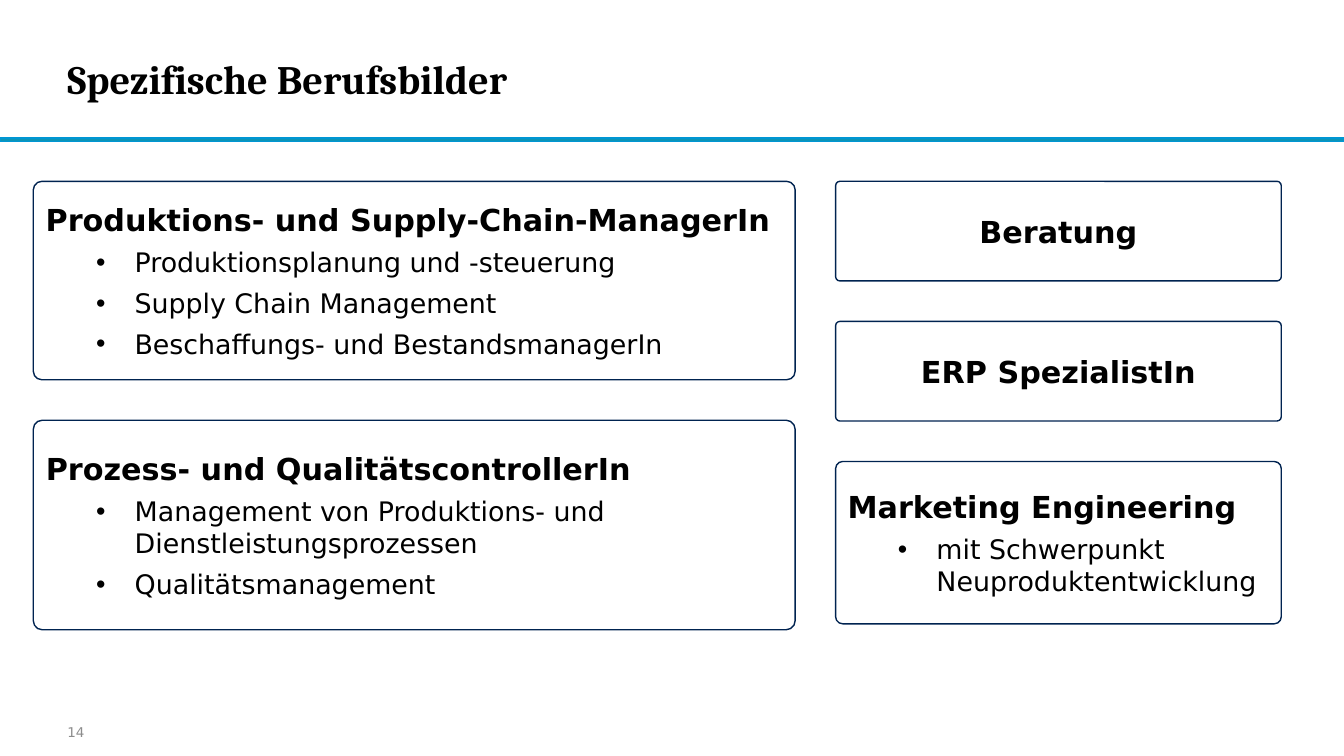
from dataclasses import dataclass

from lxml.etree import SubElement
from pptx import Presentation
from pptx.dml.color import RGBColor
from pptx.enum.shapes import MSO_SHAPE
from pptx.enum.text import MSO_ANCHOR, MSO_AUTO_SIZE, PP_ALIGN
from pptx.oxml.ns import qn
from pptx.util import Cm, Pt


@dataclass(frozen=True)
class Theme:
    black = RGBColor.from_string("000000")
    white = RGBColor.from_string("FFFFFF")
    navy = RGBColor.from_string("002350")
    rule_fill = RGBColor.from_string("0C94B7")
    rule_line = RGBColor.from_string("0096D3")
    gray = RGBColor.from_string("8C8C8C")
    title_font = "Cambria"
    body_font = "DejaVu Sans"
    title_size = Pt(28.8)
    heading_size = Pt(21.6)
    item_size = Pt(19.2)
    number_size = Pt(9.6)


theme = Theme()
formats = {
    "title": {"name": theme.title_font, "size": theme.title_size, "bold": True},
    "heading": {"name": theme.body_font, "size": theme.heading_size, "bold": True},
    "item": {"name": theme.body_font, "size": theme.item_size, "bold": False},
    "number": {"name": theme.body_font, "size": theme.number_size, "bold": False},
}


def write(paragraph, text, style, color=theme.black, alignment=PP_ALIGN.LEFT):
    paragraph.alignment = alignment
    run = paragraph.add_run()
    run.text = text
    for attribute, value in formats[style].items():
        setattr(run.font, attribute, value)
    run.font.color.rgb = color


def add_box(slide, preset, place, fill, line):
    """Add a flat shape at (left, top, width, height) in centimetres."""
    shape = slide.shapes.add_shape(preset, *map(Cm, place))
    shape.shadow.inherit = False
    shape.fill.solid()
    shape.fill.fore_color.rgb = fill
    shape.line.color.rgb = line
    shape.line.width = Pt(1)
    return shape


presentation = Presentation()
presentation.slide_width = Cm(33.87)
presentation.slide_height = Cm(19.05)
slide = presentation.slides.add_slide(presentation.slide_layouts[5])

# Header and slide number
add_box(slide, MSO_SHAPE.RECTANGLE, (0, 3.48, 33.87, 0.08), theme.rule_fill, theme.rule_line)

title = slide.shapes.title
title.left, title.top, title.width, title.height = Cm(1.7), Cm(0.46), Cm(25.32), Cm(3.02)
number = slide.shapes.add_textbox(Cm(1.7), Cm(18.03), Cm(3.3), Cm(0.86))
frame_format = {
    "auto_size": MSO_AUTO_SIZE.NONE,
    "word_wrap": True,
    "vertical_anchor": MSO_ANCHOR.MIDDLE,
    "margin_left": 0,
    "margin_right": 0,
    "margin_top": 0,
    "margin_bottom": 0,
}
for shape, text, style, color in (
    (title, "Spezifische Berufsbilder", "title", theme.black),
    (number, "14", "number", theme.gray),
):
    for attribute, value in frame_format.items():
        setattr(shape.text_frame, attribute, value)
    write(shape.text_frame.paragraphs[0], text, style, color)

# Job profiles: two columns of cards, each card with height, heading and items
columns = [
    (0.84, 19.2, [
        (5.0, "Produktions- und Supply-Chain-ManagerIn", [
            "Produktionsplanung und -steuerung",
            "Supply Chain Management",
            "Beschaffungs- und BestandsmanagerIn",
        ]),
        (5.28, "Prozess- und QualitätscontrollerIn", [
            "Management von Produktions- und Dienstleistungsprozessen",
            "Qualitätsmanagement",
        ]),
    ]),
    (21.06, 11.23, [
        (2.51, "Beratung", []),
        (2.51, "ERP SpezialistIn", []),
        (4.09, "Marketing Engineering", ["mit Schwerpunkt Neuproduktentwicklung"]),
    ]),
]
first_top, card_gap = 4.57, 1.02

for left, width, cards in columns:
    top = first_top
    for height, heading, items in cards:
        card = add_box(slide, MSO_SHAPE.ROUNDED_RECTANGLE, (left, top, width, height),
                       theme.white, theme.navy)
        card.adjustments[0] = 0.043
        top += height + card_gap

        frame = card.text_frame
        frame.word_wrap = True
        frame.vertical_anchor = MSO_ANCHOR.MIDDLE
        paragraph = frame.paragraphs[0]
        paragraph.space_after = Pt(6)
        write(paragraph, heading, "heading",
              alignment=PP_ALIGN.LEFT if items else PP_ALIGN.CENTER)

        for item in items:
            paragraph = frame.add_paragraph()
            paragraph.level = 1
            paragraph.space_after = Pt(6)
            properties = paragraph._p.get_or_add_pPr()
            properties.set("marL", str(Cm(2.24)))
            properties.set("indent", str(Cm(-0.97)))
            SubElement(properties, qn("a:buFont"), typeface="Arial")
            SubElement(properties, qn("a:buChar"), char="•")
            write(paragraph, item, "item")

presentation.save("out.pptx")
